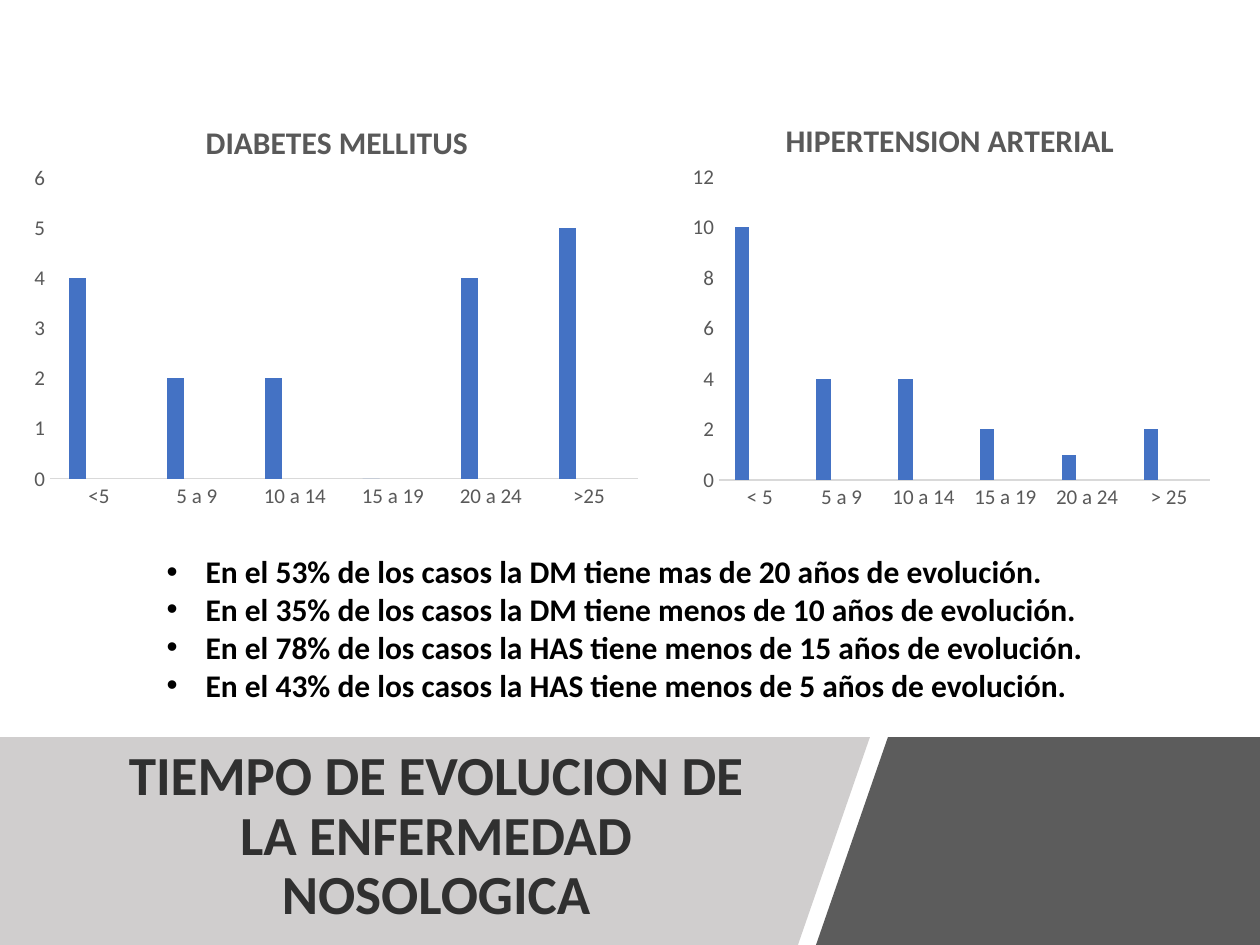
from lxml import etree
from pptx import Presentation
from pptx.chart.data import CategoryChartData
from pptx.dml.color import RGBColor
from pptx.enum.chart import XL_CHART_TYPE as ChartType, XL_TICK_MARK as TickMark
from pptx.enum.text import MSO_ANCHOR as Anchor, MSO_AUTO_SIZE as AutoSize, PP_ALIGN as Align
from pptx.oxml import parse_xml
from pptx.oxml.ns import nsdecls, qn
from pptx.util import Emu, Pt

SCALE = 914400 / 126
FONT = "Calibri"
BLACK = RGBColor(0x00, 0x00, 0x00)
TITLE_GREY = RGBColor(0x30, 0x30, 0x30)
BAND_GREY = RGBColor(0xD0, 0xCE, 0xCE)
CORNER_GREY = RGBColor(0x40, 0x40, 0x40)
CHART_GREY = RGBColor(0x59, 0x59, 0x59)
AXIS_GREY = RGBColor(0xD9, 0xD9, 0xD9)
SERIES_COLORS = (
    RGBColor(0x44, 0x72, 0xC4),
    RGBColor(0xED, 0x7D, 0x31),
    RGBColor(0xA5, 0xA5, 0xA5),
)

HEADING = "TIEMPO DE EVOLUCION DE LA ENFERMEDAD NOSOLOGICA"
FINDINGS = (
    "En el 53% de los casos la DM tiene mas de 20 años de evolución.",
    "En el 35% de los casos la DM tiene menos de 10 años de evolución.",
    "En el 78% de los casos la HAS tiene menos de 15 años de evolución.",
    "En el 43% de los casos la HAS tiene menos de 5 años de evolución.",
)
MIDDLE_RANGES = ("5 a 9", "10 a 14", "15 a 19", "20 a 24")


def px(length):
    return Emu(round(length * SCALE))


def style_font(font, size, color, bold=False):
    font.name = FONT
    font.size = Pt(size)
    font.bold = bold
    font.color.rgb = color


def place(shape, left, top, width, height):
    shape.left, shape.top = px(left), px(top)
    shape.width, shape.height = px(width), px(height)


def add_panel(slide, corners, color):
    builder = slide.shapes.build_freeform(*corners[0], scale=SCALE)
    builder.add_line_segments(corners[1:], close=True)
    panel = builder.convert_to_shape()
    panel.shadow.inherit = False
    panel.fill.solid()
    panel.fill.fore_color.rgb = color
    panel.line.fill.background()
    return panel


def set_opacity(shape, percent):
    color = shape.fill._xPr.find(".//" + qn("a:srgbClr"))
    etree.SubElement(color, qn("a:alpha"), val=str(percent * 1000))


def send_to_back(slide, shape):
    slide.shapes._spTree.insert(2, shape._element)


def set_layout(parent, position, frame, box, inner=False):
    """Fix a chart part at box, given in px on the slide, within the chart frame."""
    for layout in parent.findall(qn("c:layout")):
        parent.remove(layout)
    left, top, width, height = frame
    settings = [("layoutTarget", "inner")] if inner else []
    settings += [("xMode", "edge"), ("yMode", "edge")]
    shares = (
        (box[0] - left) / width,
        (box[1] - top) / height,
        *(size / whole for size, whole in zip(box[2:], (width, height))),
    )
    settings += [(name, round(share, 4)) for name, share in zip("xywh", shares)]
    items = "".join(f'<c:{name} val="{value}"/>' for name, value in settings)
    parent.insert(position, parse_xml(
        f'<c:layout {nsdecls("c")}><c:manualLayout>{items}</c:manualLayout></c:layout>'))


def add_column_chart(slide, title, ranges, counts, frame, title_at, plot_box, top, step):
    data = CategoryChartData()
    data.categories = ranges
    blank = (None,) * len(counts)
    for number, values in enumerate((counts, blank, blank), 1):
        data.add_series(f"Series {number}", values)
    chart = slide.shapes.add_chart(
        ChartType.COLUMN_CLUSTERED, *map(px, frame), data).chart
    style_font(chart.font, 10, BLACK)
    chart.has_legend = False

    chart.has_title = True
    heading = chart.chart_title.text_frame
    heading.text = title
    style_font(heading.paragraphs[0].font, 18, CHART_GREY, bold=True)
    set_layout(chart.chart_title._element, 1, frame, title_at)
    set_layout(chart._chartSpace.chart.plotArea, 0, frame, plot_box, inner=True)

    plot = chart.plots[0]
    plot.gap_width, plot.overlap, plot.vary_by_categories = 219, -27, False
    for series, color in zip(plot.series, SERIES_COLORS):
        series.format.fill.solid()
        series.format.fill.fore_color.rgb = color

    for axis in (chart.category_axis, chart.value_axis):
        axis.has_major_gridlines = False
        axis.major_tick_mark = axis.minor_tick_mark = TickMark.NONE
        style_font(axis.tick_labels.font, 12, CHART_GREY)
    chart.category_axis.format.line.color.rgb = AXIS_GREY
    chart.category_axis.format.line.width = Pt(0.75)
    chart.value_axis.format.line.fill.background()
    chart.value_axis.minimum_scale = 0
    chart.value_axis.maximum_scale = top
    chart.value_axis.major_unit = step


def fill_title(title):
    place(title, 87, 762, 698, 151)
    frame = title.text_frame
    frame.text = HEADING
    frame.word_wrap = True
    frame.auto_size = AutoSize.NONE
    frame.vertical_anchor = Anchor.MIDDLE
    paragraph = frame.paragraphs[0]
    paragraph.alignment = Align.CENTER
    paragraph.line_spacing = 0.9
    style_font(paragraph.font, 31.5, TITLE_GREY, bold=True)


def fill_findings(body):
    place(body, 154, 546, 950, 165)
    frame = body.text_frame
    frame.text = "\n".join(FINDINGS)
    frame.word_wrap = False
    frame.auto_size = AutoSize.NONE
    frame.vertical_anchor = Anchor.TOP
    for paragraph in frame.paragraphs:
        paragraph.space_before = Pt(0)
        style_font(paragraph.font, 18, BLACK, bold=True)
        properties = paragraph._p.get_or_add_pPr()
        properties.set("marL", str(px(39)))
        properties.set("indent", str(-px(39)))
        etree.SubElement(properties, qn("a:buFont"), typeface="Arial")
        etree.SubElement(properties, qn("a:buChar"), char="•")
        properties.append(properties.find(qn("a:defRPr")))


def main():
    deck = Presentation()
    deck.slide_width, deck.slide_height = px(1260), px(945)
    slide = deck.slides.add_slide(deck.slide_layouts[1])

    band = add_panel(slide, [(0, 737), (870, 737), (798, 945), (0, 945)], BAND_GREY)
    send_to_back(slide, band)
    corner = add_panel(
        slide, [(888, 737), (1260, 737), (1260, 945), (816, 945)], CORNER_GREY)
    set_opacity(corner, 85)

    fill_title(slide.shapes.title)
    fill_findings(slide.placeholders[1])
    add_column_chart(
        slide, "DIABETES MELLITUS", ("<5", *MIDDLE_RANGES, ">25"), (4, 2, 2, 0, 4, 5),
        (21, 88, 630, 430), (200, 115), (50, 178, 588, 301), top=6, step=1)
    add_column_chart(
        slide, "HIPERTENSION ARTERIAL", ("< 5", *MIDDLE_RANGES, "> 25"), (10, 4, 4, 2, 1, 2),
        (682, 86, 539, 432), (780, 113), (719, 177, 491, 303), top=12, step=2)

    deck.save("out.pptx")


if __name__ == "__main__":
    main()
